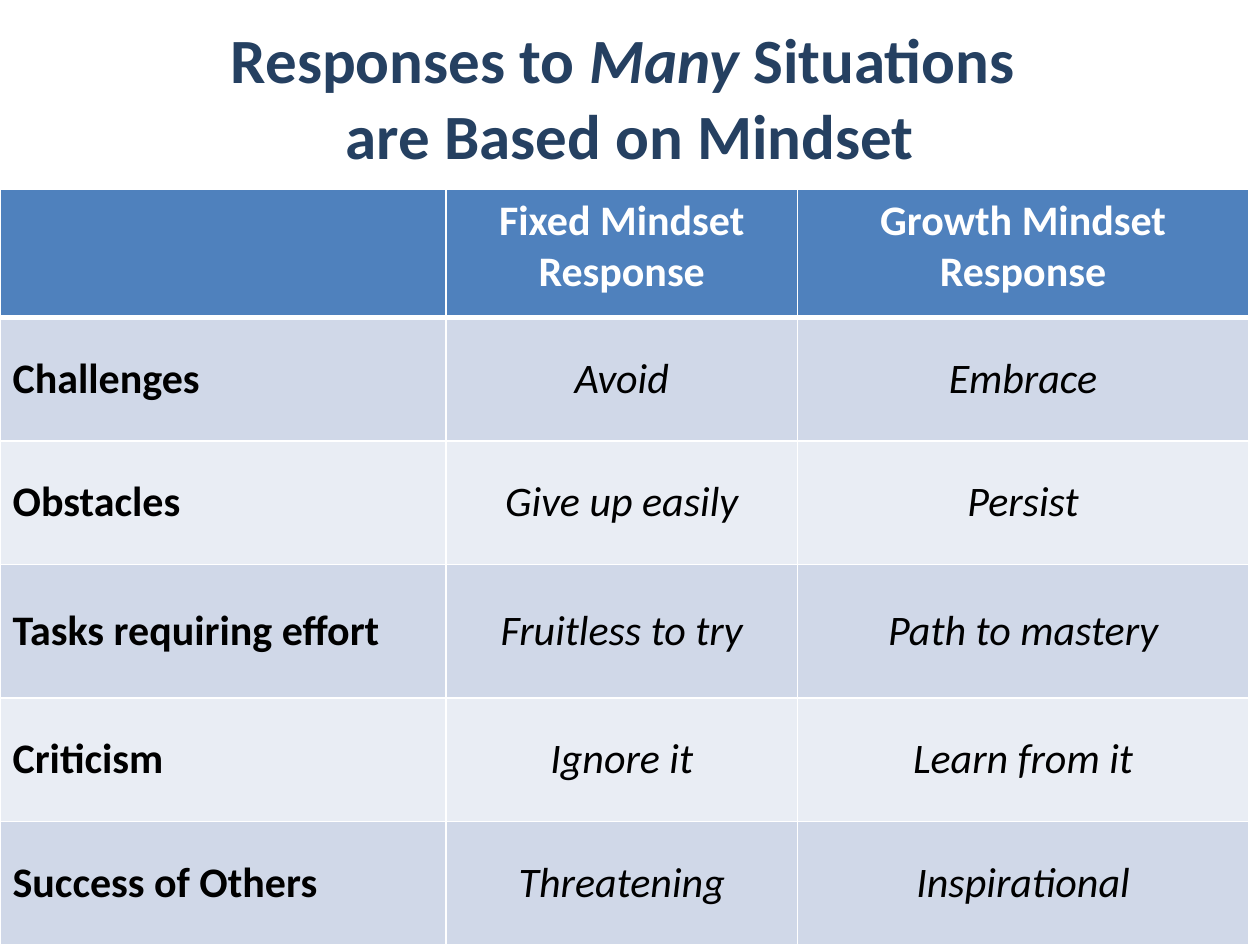
from dataclasses import dataclass

from lxml import etree
from pptx import Presentation
from pptx.dml.color import RGBColor
from pptx.enum.text import MSO_ANCHOR, MSO_AUTO_SIZE, PP_ALIGN
from pptx.oxml.ns import qn
from pptx.util import Inches, Pt

LEFT, CENTER = PP_ALIGN.LEFT, PP_ALIGN.CENTER
TOP, MIDDLE = MSO_ANCHOR.TOP, MSO_ANCHOR.MIDDLE
FIXED = MSO_AUTO_SIZE.NONE


@dataclass(frozen=True)
class Theme:
    font: str = "Calibri"
    title: str = "254061"
    head: str = "4F81BD"
    bands: tuple = ("D0D8E8", "E9EDF4")
    white: str = "FFFFFF"
    ink: str = "000000"
    big: int = 36
    body: int = 24
    thin: int = 1
    thick: int = 3


THEME = Theme()
COLS = (3.54, 2.79, 3.58)
ROWS = (1.02, 0.98, 0.98, 1.06, 0.98, 0.98)
DATA = (
    ("", "Fixed Mindset Response", "Growth Mindset Response"),
    ("Challenges", "Avoid", "Embrace"),
    ("Obstacles", "Give up easily", "Persist"),
    ("Tasks requiring effort", "Fruitless to try", "Path to mastery"),
    ("Criticism", "Ignore it", "Learn from it"),
    ("Success of Others", "Threatening", "Inspirational"),
)


def add_run(para, text, size, color, bold=False, italic=False):
    run = para.add_run()
    run.text = text
    font = run.font
    font.name, font.size = THEME.font, Pt(size)
    font.bold, font.italic = bold, italic
    font.color.rgb = RGBColor.from_string(color)


def add_title(slide, left, top, width, height):
    title = slide.shapes.title
    title.left, title.top = Inches(left), Inches(top)
    title.width, title.height = Inches(width), Inches(height)
    frame = title.text_frame
    frame.word_wrap = True
    frame.auto_size = FIXED
    frame.vertical_anchor = MIDDLE
    frame.margin_bottom = Inches(0.6)
    para = frame.paragraphs[0]
    para.alignment = CENTER
    for text, italic in (("Responses to ", False), ("Many", True), (" Situations ", False)):
        add_run(para, text, THEME.big, THEME.title, True, italic)
    para.add_line_break()
    add_run(para, "are Based on Mindset", THEME.big, THEME.title, True)


def set_edges(cell, base):
    props = cell._tc.get_or_add_tcPr()
    sides = (("lnL", THEME.thin), ("lnR", THEME.thin), ("lnT", THEME.thin), ("lnB", base))
    for spot, (side, width) in enumerate(sides):
        line = etree.Element(qn(f"a:{side}"), w=str(Pt(width)))
        fill = etree.SubElement(line, qn("a:solidFill"))
        etree.SubElement(fill, qn("a:srgbClr"), val=THEME.white)
        props.insert(spot, line)


def fill_cell(cell, text, row, col):
    head, label = row == 0, col == 0
    color = THEME.head if head else THEME.bands[(row - 1) % 2]
    cell.fill.solid()
    cell.fill.fore_color.rgb = RGBColor.from_string(color)
    cell.vertical_anchor = TOP if head else MIDDLE
    set_edges(cell, THEME.thick if head else THEME.thin)
    if text:
        para = cell.text_frame.paragraphs[0]
        para.alignment = LEFT if label else CENTER
        ink = THEME.white if head else THEME.ink
        plain = head or label
        add_run(para, text, THEME.body, ink, plain, not plain)


def add_grid(slide, left, top, width, height):
    shape = slide.shapes.add_table(
        len(ROWS), len(COLS), Inches(left), Inches(top), Inches(width), Inches(height)
    )
    table = shape.table
    for col, size in zip(table.columns, COLS):
        col.width = Inches(size)
    for row, size in zip(table.rows, ROWS):
        row.height = Inches(size)
    for row, texts in enumerate(DATA):
        for col, text in enumerate(texts):
            fill_cell(table.cell(row, col), text, row, col)


def main():
    deck = Presentation()
    deck.slide_width, deck.slide_height = Inches(10), Inches(7.5)
    slide = deck.slides.add_slide(deck.slide_layouts[5])
    add_title(slide, 0, 0.33, 10, 1.42)
    add_grid(slide, 0, 1.5, sum(COLS), sum(ROWS))
    deck.save("out.pptx")


if __name__ == "__main__":
    main()
